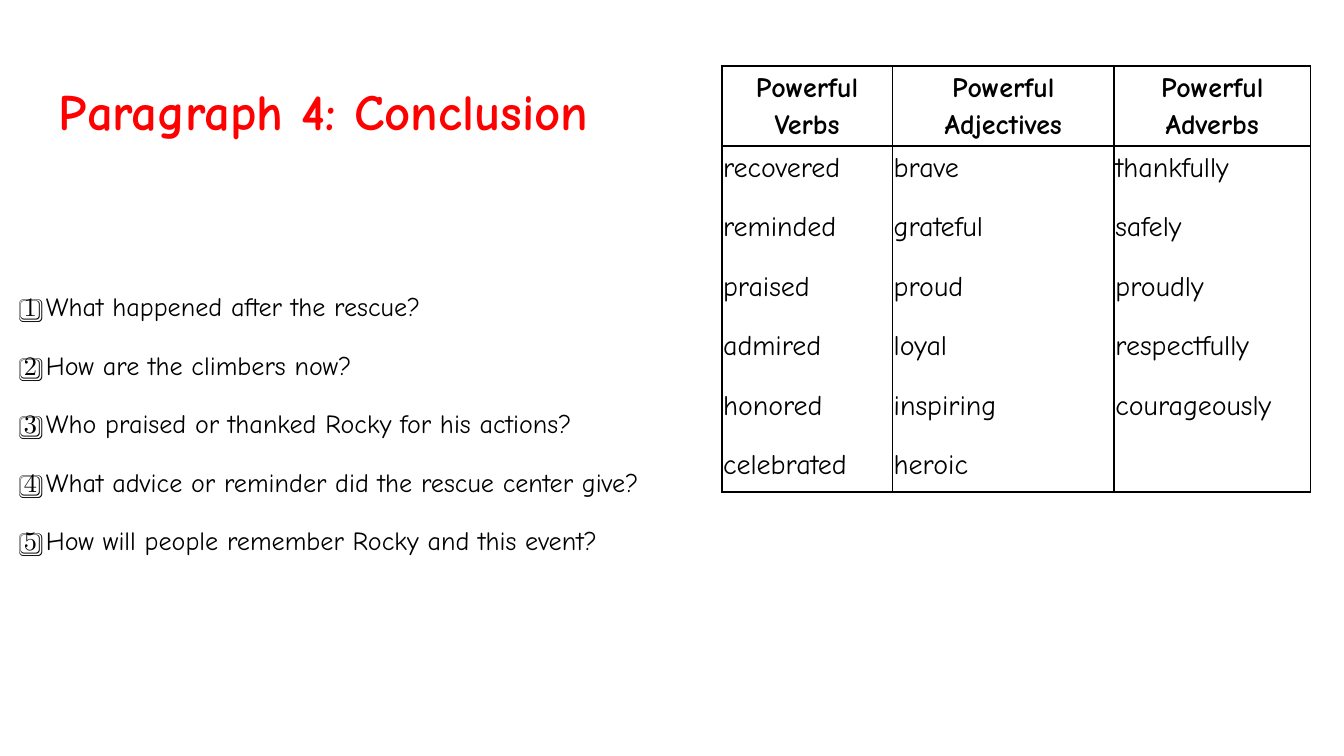
from dataclasses import dataclass

from lxml import etree
from pptx import Presentation
from pptx.dml.color import RGBColor
from pptx.enum.text import MSO_ANCHOR as Anchor, PP_ALIGN as Align
from pptx.oxml.ns import qn
from pptx.util import Inches, Pt


@dataclass(frozen=True)
class Theme:
    font: str = "Comic Neue"
    red: str = "FF0000"
    black: str = "000000"
    white: str = "FFFFFF"
    title_size: float = 27.2
    question_size: float = 14
    table_size: float = 15
    border_width: float = 1


theme = Theme()


def write_text(holder, lines, size, color=theme.black, bold=False,
               align=Align.LEFT, spacing=None, before=None, margin=0.1):
    """Fill a text box or table cell, one paragraph for each line."""
    frame = holder.text_frame
    target = frame if hasattr(holder, "shape_type") else holder
    target.margin_left = target.margin_right = Inches(margin)
    target.margin_top = target.margin_bottom = Inches(margin)
    target.vertical_anchor = Anchor.TOP
    for index, line in enumerate(lines):
        paragraph = frame.add_paragraph() if index else frame.paragraphs[0]
        paragraph.alignment = align
        if spacing:
            paragraph.line_spacing = spacing
        if before is not None:
            paragraph.space_before = Pt(before)
        run = paragraph.add_run()
        run.text = line
        run.font.name = theme.font
        run.font.size = Pt(size)
        run.font.bold = bold
        run.font.color.rgb = RGBColor.from_string(color)


def add_borders(cell):
    properties = cell._tc.get_or_add_tcPr()
    for position, side in enumerate(("a:lnL", "a:lnR", "a:lnT", "a:lnB")):
        line = etree.Element(qn(side), w=str(Pt(theme.border_width)))
        fill = etree.SubElement(line, qn("a:solidFill"))
        etree.SubElement(fill, qn("a:srgbClr"), val=theme.black)
        properties.insert(position, line)


# 16:9 slide
presentation = Presentation()
presentation.slide_width = Inches(10)
presentation.slide_height = Inches(10 * 9 / 16)
slide = presentation.slides.add_slide(presentation.slide_layouts[6])
slide.background.fill.solid()
slide.background.fill.fore_color.rgb = RGBColor.from_string(theme.white)

# Title
title = slide.shapes.add_textbox(Inches(0.34), Inches(0.49), Inches(9.32), Inches(0.63))
title.text_frame.word_wrap = True
write_text(title, ["Paragraph 4: Conclusion"], theme.title_size, color=theme.red, bold=True)

# Numbered questions
questions = [
    "What happened after the rescue?",
    "How are the climbers now?",
    "Who praised or thanked Rocky for his actions?",
    "What advice or reminder did the rescue center give?",
    "How will people remember Rocky and this event?",
]
question_box = slide.shapes.add_textbox(Inches(0.08), Inches(2.03), Inches(5.61), Inches(2.47))
question_box.text_frame.word_wrap = True
write_text(question_box,
           [f"{number}️⃣ {question}" for number, question in enumerate(questions, 1)],
           theme.question_size, spacing=1.15, before=12)

# Word table: heading, column width, words
word_columns = [
    ("Powerful Verbs", 1.27,
     ["recovered", "reminded", "praised", "admired", "honored", "celebrated"]),
    ("Powerful Adjectives", 1.65,
     ["brave", "grateful", "proud", "loyal", "inspiring", "heroic"]),
    ("Powerful Adverbs", 1.46,
     ["thankfully", "safely", "proudly", "respectfully", "courageously"]),
]
row_heights = [0.28, 2.26]
table_width = sum(width for _, width, _ in word_columns)
table = slide.shapes.add_table(len(row_heights), len(word_columns), Inches(5.37), Inches(0.49),
                               Inches(table_width), Inches(sum(row_heights))).table
table.first_row = table.horz_banding = False
for row, height in zip(table.rows, row_heights):
    row.height = Inches(height)

for column, (heading, width, words) in enumerate(word_columns):
    table.columns[column].width = Inches(width)
    for row, lines in enumerate(([heading], words)):
        is_heading = row == 0
        cell = table.cell(row, column)
        cell.fill.background()
        add_borders(cell)
        write_text(cell, lines, theme.table_size, bold=is_heading,
                   align=Align.CENTER if is_heading else Align.LEFT,
                   spacing=1.15, before=12, margin=0.01)

presentation.save("out.pptx")
